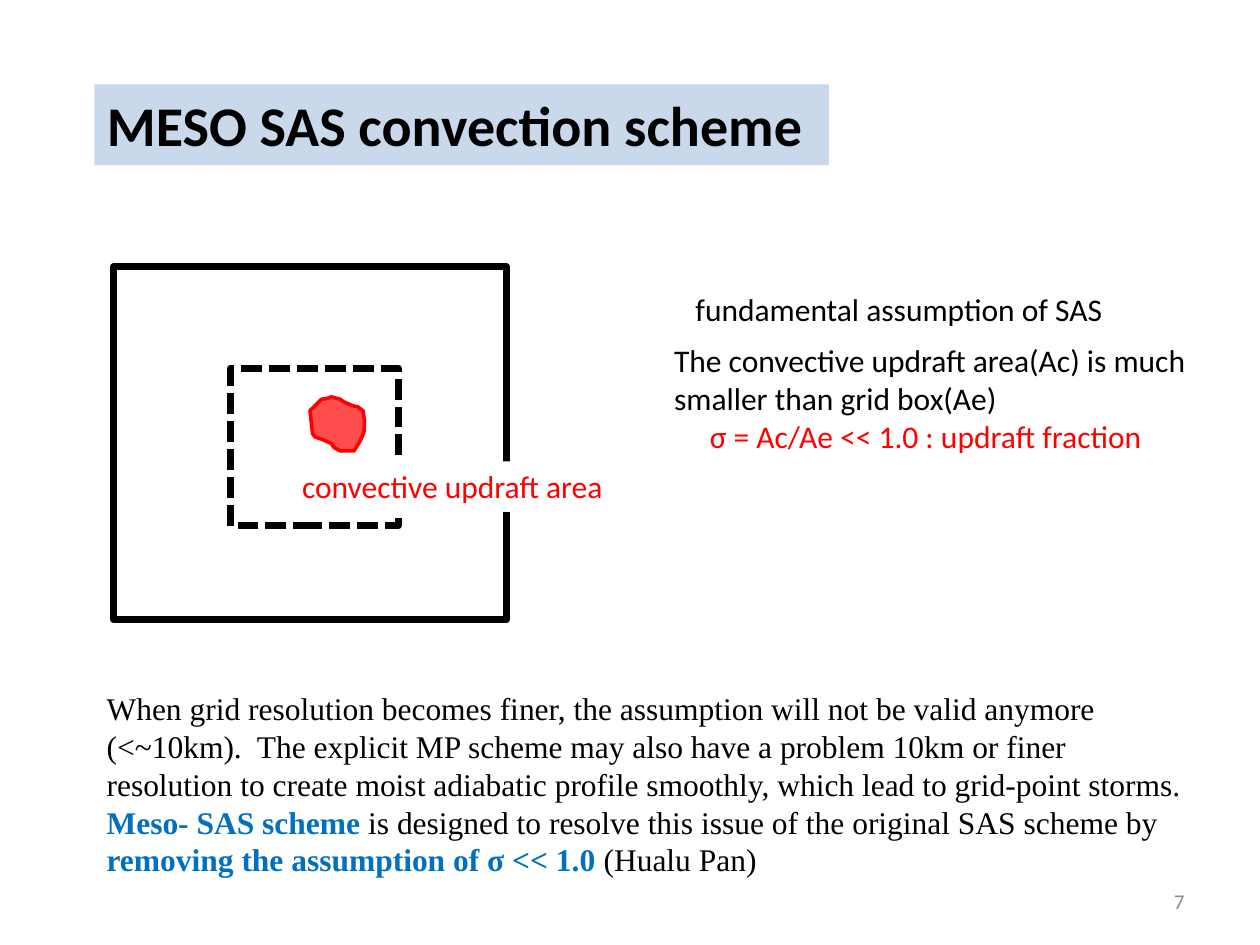
from lxml import etree
from pptx import Presentation
from pptx import util as u
from pptx.dml.color import RGBColor
from pptx.enum import dml, shapes, text
from pptx.oxml.ns import qn

COLORS = {"black": "000000", "white": "FFFFFF", "red": "FF0000",
          "blue": "0070C0", "title_band": "4F81BD", "gray": "8C8C8C"}

TITLE = "MESO SAS convection scheme"
TITLE_BOX = (1.9, 1.7, 14.81, 1.63)

# Squares: box in cm, dash style
SQUARES = [
    ((4.65, 7.42, 3.38, 3.18), dml.MSO_LINE.SQUARE_DOT),
    ((2.29, 5.38, 7.92, 7.11), None),
]

# Outline of the updraft area, in hundredths of a cm
UPDRAFT = [(625, 828), (630, 874), (635, 881), (650, 886), (668, 894), (673, 902),
           (686, 909), (714, 909), (726, 889), (732, 876), (734, 869), (735, 848),
           (732, 828), (721, 820), (711, 818), (693, 810), (686, 805), (668, 800),
           (660, 803), (648, 805)]

# Texts: box in cm, paragraphs of (text, font format) runs, other settings
CALIBRI = {"name": "Calibri", "size": u.Pt(18), "bold": False}
TIMES = {**CALIBRI, "name": "Times New Roman"}
STRONG = {**TIMES, "bold": True, "color": "blue"}
RED = {**CALIBRI, "color": "red"}
TEXTS = [
    {"box": (5.84, 9.3, 6.99, 1.02), "fill": "white",
     "paragraphs": [[("convective updraft area", RED)]]},
    {"box": (13.77, 5.72, 9.32, 1.02),
     "paragraphs": [[("fundamental assumption of SAS", CALIBRI)]]},
    {"box": (13.34, 6.76, 11.23, 2.57), "indents": {1: 0.72},
     "paragraphs": [
         [("The convective updraft area(Ac) is much smaller than grid box(Ae)", CALIBRI)],
         [("σ = Ac/Ae << 1.0 : updraft fraction", RED)]]},
    {"box": (1.9, 13.77, 22.23, 4.11),
     "paragraphs": [
         [("When grid resolution becomes finer, the assumption will not be valid anymore "
           "(<~10km).  The explicit MP scheme may also have a problem 10km or finer "
           "resolution to create moist adiabatic profile smoothly, which lead to "
           "grid-point storms.", TIMES)],
         [("Meso- SAS scheme ", STRONG),
          ("is designed to resolve this issue of the original SAS scheme by ", TIMES),
          ("removing the assumption of σ << 1.0", STRONG),
          (" (Hualu Pan)", TIMES)]]},
    {"box": (18.21, 17.65, 5.92, 1.02), "align": text.PP_ALIGN.RIGHT,
     "anchor": text.MSO_ANCHOR.MIDDLE,
     "paragraphs": [[("7", {**CALIBRI, "size": u.Pt(12), "color": "gray"})]]},
]


def rgb(color):
    return RGBColor.from_string(COLORS[color])


def cm(box):
    return [u.Cm(length) for length in box]


def set_fill(shape, color, opacity=100):
    shape.fill.solid()
    shape.fill.fore_color.rgb = rgb(color)
    if opacity < 100:
        srgb = shape.fill._xPr.find(qn("a:solidFill"))[0]
        etree.SubElement(srgb, qn("a:alpha"), val=str(opacity * 1000))


def set_line(shape, color, width, dash=None):
    shape.shadow.inherit = False
    shape.line.color.rgb = rgb(color)
    shape.line.width = u.Pt(width)
    if dash:
        shape.line.dash_style = dash


def set_font(font, values):
    for key, value in values.items():
        if key != "color":
            setattr(font, key, value)
    font.color.rgb = rgb(values.get("color", "black"))


def write(shape, paragraphs, align=text.PP_ALIGN.LEFT, anchor=text.MSO_ANCHOR.TOP,
          indents=None):
    frame = shape.text_frame
    settings = {"word_wrap": True, "vertical_anchor": anchor,
                "auto_size": text.MSO_AUTO_SIZE.NONE}
    for key, value in settings.items():
        setattr(frame, key, value)
    for index, runs in enumerate(paragraphs):
        paragraph = frame.add_paragraph() if index else frame.paragraphs[0]
        paragraph.alignment = align
        if indents and index in indents:
            paragraph._p.get_or_add_pPr().set("marL", str(u.Cm(indents[index])))
        for words, font in runs:
            run = paragraph.add_run()
            run.text = words
            set_font(run.font, font)


def main():
    deck = Presentation()
    deck.slide_width, deck.slide_height = cm((25.4, 19.05))
    slide = deck.slides.add_slide(deck.slide_layouts[5])

    title = slide.shapes.title
    title.left, title.top, title.width, title.height = cm(TITLE_BOX)
    set_fill(title, "title_band", 30)
    write(title, [[(TITLE, {**CALIBRI, "size": u.Pt(32), "bold": True})]])

    for box, dash in SQUARES:
        square = slide.shapes.add_shape(shapes.MSO_SHAPE.RECTANGLE, *cm(box))
        square.fill.background()
        set_line(square, "black", 4, dash)

    outline = slide.shapes.build_freeform(*UPDRAFT[0], scale=u.Cm(0.01))
    outline.add_line_segments(UPDRAFT[1:], close=True)
    updraft = outline.convert_to_shape()
    set_fill(updraft, "red", 70)
    set_line(updraft, "red", 2)

    for item in TEXTS:
        label = slide.shapes.add_textbox(*cm(item["box"]))
        if "fill" in item:
            set_fill(label, item["fill"])
        options = {key: item[key] for key in ("align", "anchor", "indents") if key in item}
        write(label, item["paragraphs"], **options)

    deck.save("out.pptx")


if __name__ == "__main__":
    main()
